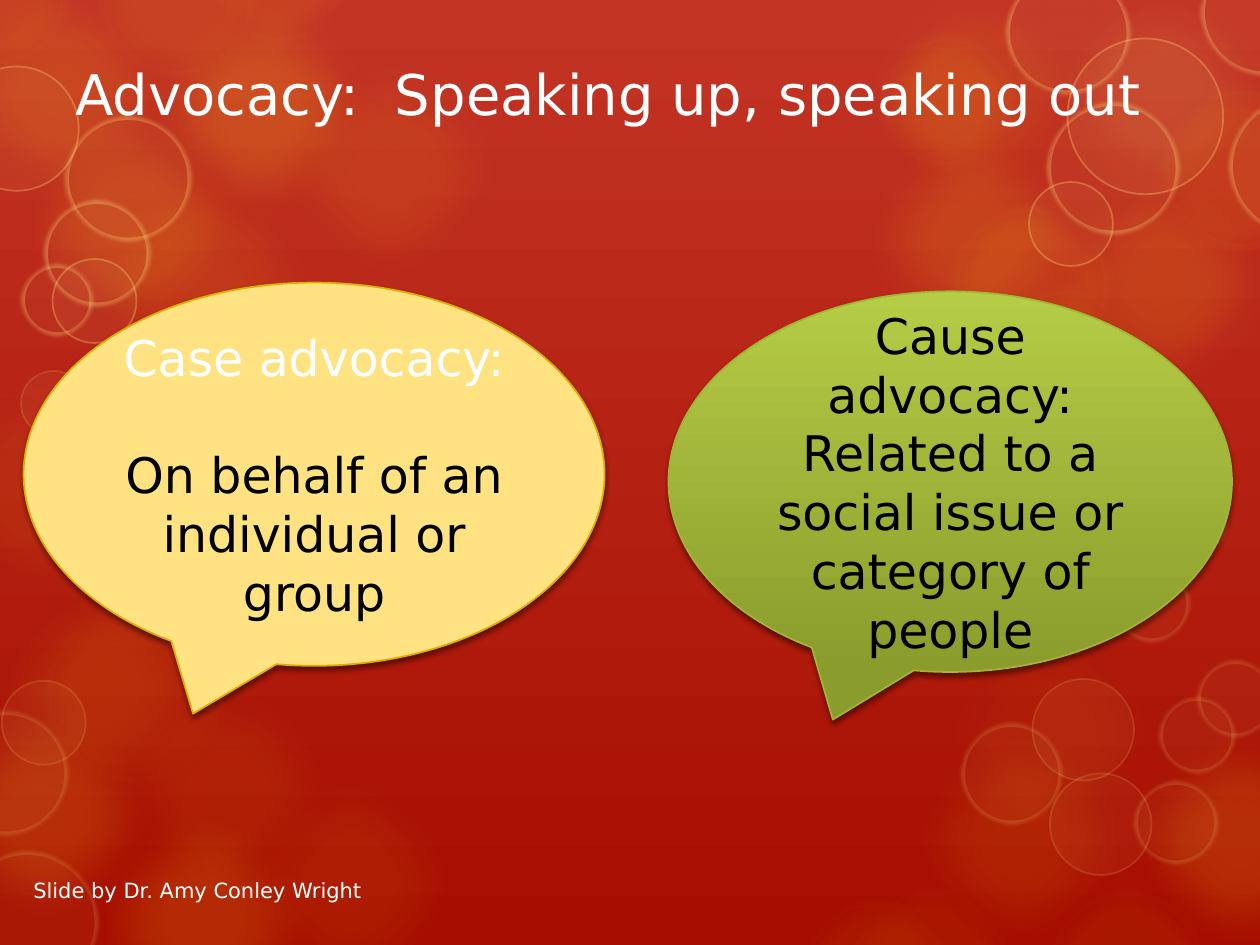
from dataclasses import dataclass

from lxml.etree import SubElement
from pptx import Presentation
from pptx.dml.color import RGBColor
from pptx.enum.shapes import MSO_SHAPE
from pptx.enum.text import MSO_ANCHOR, PP_ALIGN
from pptx.oxml.ns import qn
from pptx.util import Pt

OVAL = MSO_SHAPE.OVAL
CALLOUT = MSO_SHAPE.OVAL_CALLOUT
MIDDLE = MSO_ANCHOR.MIDDLE
TOP = MSO_ANCHOR.TOP
CENTER = PP_ALIGN.CENTER
LEFT = PP_ALIGN.LEFT

FONT = "DejaVu Sans"
COLORS = {
    "sky": "C33425", "ground": "A60E00", "amber": "FDC61B",
    "cream": "FFE281", "pale": "FEEBAE", "gold": "E1AC00",
    "lime": "B5CC46", "moss": "8A9C2C", "leaf": "A1B633",
    "white": "FFFFFF", "black": "000000",
}


@dataclass
class Style:
    fill: str
    alpha: int
    line: str = ""
    width: float = 0
    shade: int = 0
    soft: float = 0


@dataclass
class Disc:
    x: float
    y: float
    size: float
    style: Style


@dataclass
class Line:
    text: str
    color: str
    size: float
    after: float = 0


@dataclass
class Bubble:
    box: tuple
    fills: tuple
    edge: str
    lines: list


def blob(x: float, y: float, alpha: int, size: float = 150,
         fill: str = "amber") -> Disc:
    return Disc(x, y, size, Style(fill, alpha, soft=25))


def glow(x: float, y: float, size: float, alpha: int, shade: int) -> Disc:
    return Disc(x, y, size, Style("amber", alpha, "pale", 14, shade, 12.5))


def ring(x: float, y: float, size: float, width: float, shade: int) -> Disc:
    soft = 2.5 if width > 1 else 0
    return Disc(x, y, size, Style("cream", 5, "cream", width, shade, soft))


BACK = [blob(*b) for b in (
    (-18, 318, 8), (41, 86, 10), (148, 22, 10), (41, 451, 16),
    (-40, -23, 14), (73, -13, 20), (0, 52, 15),
    (590, -23, 10, 150, "cream"), (482, -21, 10), (590, 86, 15),
    (634, 405, 16), (525, 343, 5), (-49, 390, 16), (55, 377, 8),
    (482, 62, 15), (508, 405, 10))]
HIGH = [glow(*g, 10, 6) for g in (
    (661, 47, 99), (500, 17, 82), (541, 114, 96), (568, 161, 82),
    (610, 210, 57), (54, -47, 94), (118, -54, 82), (-41, -41, 82))]
LOW = [glow(*g, 6, 4) for g in (
    (22, 341, 110), (455, 511, 90), (482, 505, 98), (596, 505, 96))]
BRIGHT = [ring(*r, 30) for r in (
    (-26, 38, 71, 1), (37, 66, 72, 5), (25, 114, 61, 5), (30, 148, 48, 1),
    (12, 151, 41, 5), (575, -17, 71, 5), (686, -29, 72, 5),
    (610, 22, 89, 1), (702, 55, 80, 5), (598, 58, 76, 5),
    (588, 104, 48, 1))]
FAINT = [ring(*r, 15) for r in (
    (1, 389, 48, 1), (-25, 486, 81, 5), (-32, 406, 71, 5),
    (600, 442, 58, 1), (549, 413, 58, 5), (590, 388, 58, 1),
    (648, 446, 48, 5), (636, 323, 44, 5), (662, 398, 44, 5),
    (684, 377, 44, 5), (675, 266, 24, 5), (661, 279, 24, 5),
    (677, 290, 24, 5), (12, 212, 37, 1), (37, 249, 36, 1),
    (22, 266, 28, 5))]
FRONT = [blob(125, 429, 8), blob(-50, 203, 8), blob(486, 189, 10, 96)]

BUBBLES = [
    Bubble((13.5, 161.5, 332, 219), ("cream",), "gold", [
        Line("Case advocacy:", "white", 28, 33.5),
        Line("On behalf of an individual or group", "black", 28)]),
    Bubble((382, 166.5, 322, 217.5), ("lime", "moss"), "leaf", [
        Line("Cause advocacy: Related to a social issue or category of people",
             "black", 28)]),
]


def rgb(name: str) -> RGBColor:
    return RGBColor.from_string(COLORS[name])


def paint(fill, *names: str) -> None:
    if len(names) == 1:
        fill.solid()
        fill.fore_color.rgb = rgb(names[0])
        return
    fill.gradient()
    fill.gradient_angle = 270
    for stop, name, place in zip(fill.gradient_stops, names, (0, 1)):
        stop.color.rgb = rgb(name)
        stop.position = place


def effects(shape):
    shape.shadow.inherit = False
    return shape._element.spPr.find(qn("a:effectLst"))


def fade(node, alpha: int) -> None:
    SubElement(node, qn("a:alpha"), val=str(alpha * 1000))


def draw_disc(shapes, disc: Disc) -> None:
    style = disc.style
    shape = shapes.add_shape(OVAL, Pt(disc.x), Pt(disc.y),
                             Pt(disc.size), Pt(disc.size))
    paint(shape.fill, style.fill)
    if style.line:
        paint(shape.line.fill, style.line)
        shape.line.width = Pt(style.width)
    else:
        shape.line.fill.background()
    tints = list(shape._element.spPr.iter(qn("a:srgbClr")))
    for node, alpha in zip(tints, (style.alpha, style.shade)):
        fade(node, alpha)
    group = effects(shape)
    if style.soft:
        SubElement(group, qn("a:softEdge"), rad=str(Pt(style.soft)))


def write(frame, lines: list, align, anchor) -> None:
    frame.word_wrap = True
    frame.vertical_anchor = anchor
    for i, line in enumerate(lines):
        para = frame.add_paragraph() if i else frame.paragraphs[0]
        para.text = line.text
        para.alignment = align
        para.space_after = Pt(line.after)
        para.font.name = FONT
        para.font.size = Pt(line.size)
        para.font.color.rgb = rgb(line.color)


def draw_bubble(shapes, item: Bubble) -> None:
    shape = shapes.add_shape(CALLOUT, *map(Pt, item.box))
    paint(shape.fill, *item.fills)
    paint(shape.line.fill, item.edge)
    shape.line.width = Pt(1)
    cast = SubElement(effects(shape), qn("a:outerShdw"), blurRad=str(Pt(3)),
                      dist=str(Pt(2)), dir="5400000", rotWithShape="0")
    fade(SubElement(cast, qn("a:srgbClr"), val=COLORS["black"]), 45)
    write(shape.text_frame, item.lines, CENTER, MIDDLE)


def draw_text(shapes, box: tuple, line: Line, anchor) -> None:
    frame = shapes.add_textbox(*map(Pt, box)).text_frame
    write(frame, [line], LEFT, anchor)


def main() -> None:
    deck = Presentation()
    deck.slide_width, deck.slide_height = Pt(720), Pt(540)
    slide = deck.slides.add_slide(deck.slide_layouts[6])
    paint(slide.background.fill, "sky", "ground")
    shapes = slide.shapes
    for disc in BACK + HIGH + LOW + BRIGHT + FAINT + FRONT:
        draw_disc(shapes, disc)
    draw_text(shapes, (36, 8, 648, 90),
              Line("Advocacy:  Speaking up, speaking out", "white", 32), MIDDLE)
    for item in BUBBLES:
        draw_bubble(shapes, item)
    draw_text(shapes, (12, 498, 258, 22),
              Line("Slide by Dr. Amy Conley Wright", "white", 12), TOP)
    deck.save("out.pptx")


if __name__ == "__main__":
    main()
